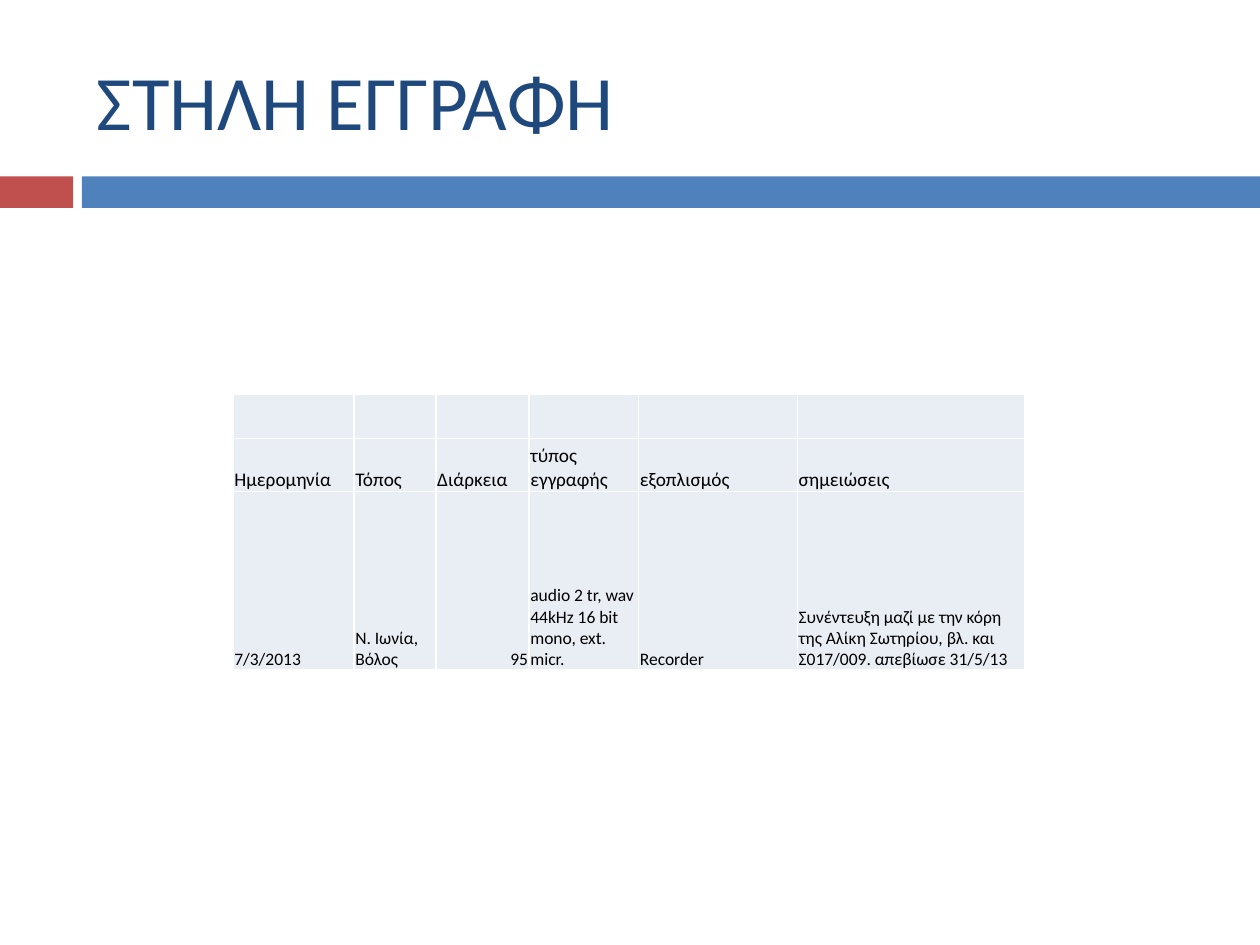
from lxml import etree
from pptx import Presentation
from pptx.dml.color import RGBColor
from pptx.enum import shapes, text
from pptx.oxml import ns
from pptx.util import Inches, Pt

RED = RGBColor(0xC0, 0x50, 0x4D)
BLUE = RGBColor(0x4F, 0x81, 0xBD)
NAVY = RGBColor(0x1F, 0x49, 0x7D)
PALE = RGBColor(0xE9, 0xED, 0xF4)
WHITE = RGBColor(0xFF, 0xFF, 0xFF)
BLACK = RGBColor(0, 0, 0)

WIDTHS = [0.96, 0.65, 0.74, 0.87, 1.26, 1.8]
HEIGHTS = [0.35, 0.42, 1.42]
SIZES = [11, 11, 10]
ROWS = [
    [""] * len(WIDTHS),
    ["Ημερομηνία", "Τόπος", "Διάρκεια", "τύπος εγγραφής", "εξοπλισμός", "σημειώσεις"],
    ["7/3/2013", "Ν. Ιωνία, Βόλος", "95",
     "audio 2 tr, wav 44kHz 16 bit mono, ext. micr.", "Recorder",
     "Συνέντευξη μαζί με την κόρη της Αλίκη Σωτηρίου, βλ. και Σ017/009. απεβίωσε 31/5/13"],
]
CELL = {
    "margin_left": Inches(0.01),
    "margin_right": Inches(0.01),
    "margin_top": Inches(0.01),
    "margin_bottom": 0,
    "vertical_anchor": text.MSO_ANCHOR.BOTTOM,
}


def apply(item, values):
    for key, value in values.items():
        setattr(item, key, value)


def write(para, words, size, color):
    run = para.add_run()
    run.text = words
    apply(run.font, {"name": "Calibri", "size": Pt(size)})
    run.font.color.rgb = color


def add_title(slide, box, words):
    frame = slide.shapes.add_textbox(*map(Inches, box)).text_frame
    apply(frame, {"word_wrap": True, "vertical_anchor": text.MSO_ANCHOR.MIDDLE})
    write(frame.paragraphs[0], words, 44, NAVY)


def add_band(slide, box):
    left, top, width, height = box
    for start, span, color in ((0, 0.58, RED), (0.65, width - 0.65, BLUE)):
        bar = slide.shapes.add_shape(
            shapes.MSO_SHAPE.RECTANGLE,
            *map(Inches, (left + start, top, span, height)))
        bar.shadow.inherit = False
        bar.fill.solid()
        bar.fill.fore_color.rgb = color
        bar.line.fill.background()


def add_edges(cell):
    props = cell._tc.get_or_add_tcPr()
    for spot, side in enumerate(("lnL", "lnR", "lnT", "lnB")):
        line = etree.Element(ns.qn(f"a:{side}"), w=str(Pt(1)))
        fill = etree.SubElement(line, ns.qn("a:solidFill"))
        etree.SubElement(fill, ns.qn("a:srgbClr"), val=str(WHITE))
        props.insert(spot, line)


def add_grid(slide, box):
    table = slide.shapes.add_table(
        len(ROWS), len(WIDTHS), *map(Inches, box)).table
    apply(table, {"first_row": False, "horz_banding": False})
    for column, width in zip(table.columns, WIDTHS):
        column.width = Inches(width)
    for row, height, size, words in zip(table.rows, HEIGHTS, SIZES, ROWS):
        row.height = Inches(height)
        for cell, word in zip(row.cells, words):
            apply(cell, CELL)
            cell.fill.solid()
            cell.fill.fore_color.rgb = PALE
            add_edges(cell)
            para = cell.text_frame.paragraphs[0]
            if word:
                write(para, word, size, BLACK)
            if word.isdigit():
                para.alignment = text.PP_ALIGN.RIGHT


def main():
    deck = Presentation()
    apply(deck, {"slide_width": Inches(10), "slide_height": Inches(7.5)})
    slide = deck.slides.add_slide(deck.slide_layouts[6])
    add_band(slide, (0, 1.4, 10, 0.25))
    add_title(slide, (0.67, 0.25, 8.92, 1.08), "ΣΤΗΛΗ ΕΓΓΡΑΦΗ")
    add_grid(slide, (1.85, 3.13, sum(WIDTHS), sum(HEIGHTS)))
    deck.save("out.pptx")


if __name__ == "__main__":
    main()
